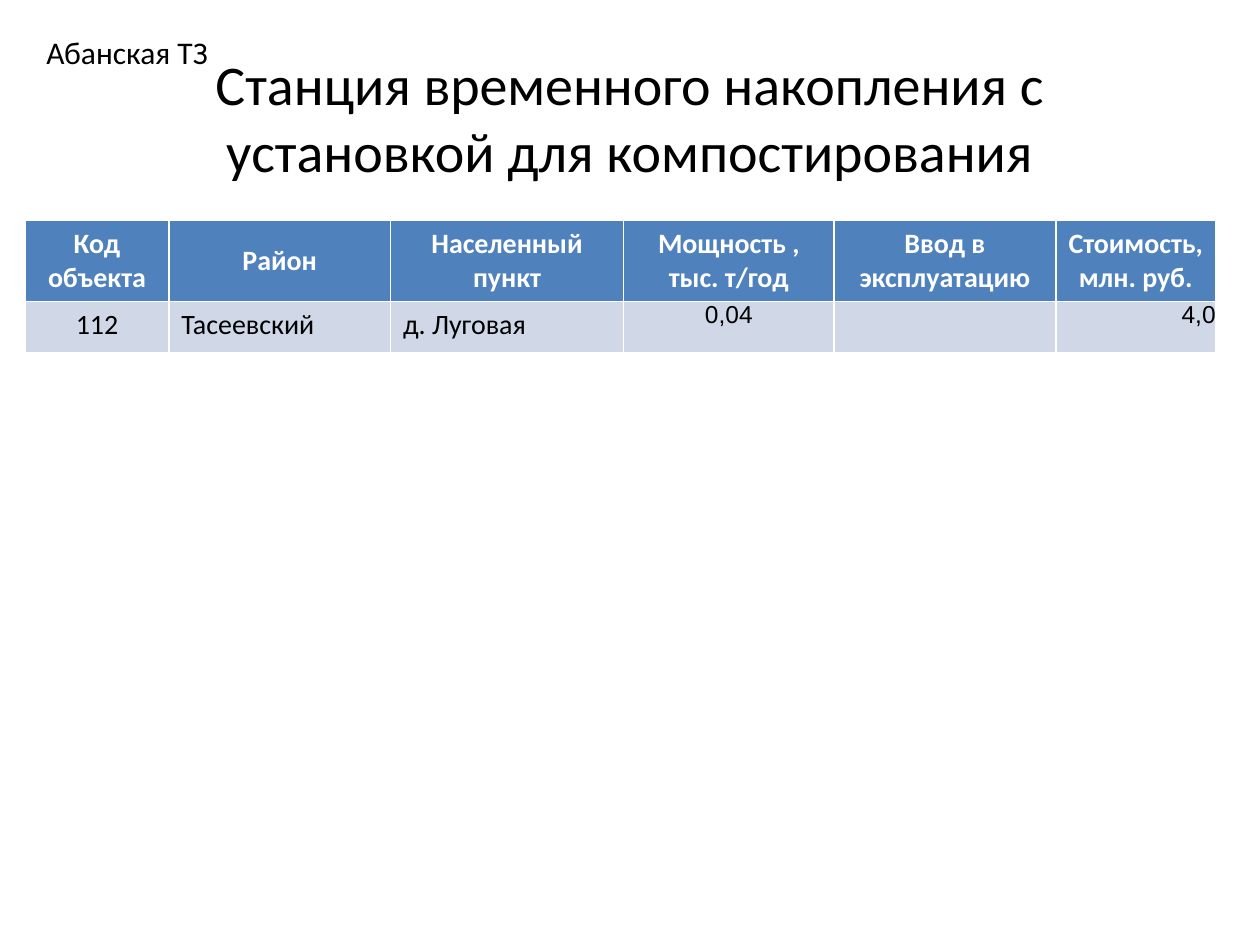
"""Builds a slide with a table of a waste storage station with composting."""
import lxml.etree
import pptx
import pptx.dml.color
import pptx.enum.text
import pptx.oxml.ns
import pptx.util

Inches = pptx.util.Inches
ALIGN = pptx.enum.text.PP_ALIGN
ANCHOR = pptx.enum.text.MSO_ANCHOR


def colour(value):
    """Return the colour for a hex string."""
    return pptx.dml.color.RGBColor.from_string(value)


def style_text(frame, size, ink="000000", align=ALIGN.LEFT, font="Calibri", bold=False):
    """Format every paragraph and run of a text frame."""
    for para in frame.paragraphs:
        para.alignment = align
        for span in para.runs:
            span.font.size = pptx.util.Pt(size)
            span.font.name = font
            span.font.bold = bold
            span.font.color.rgb = colour(ink)


deck = pptx.Presentation()
deck.slide_width, deck.slide_height = Inches(10), Inches(7.5)
page = deck.slides.add_slide(deck.slide_layouts[5])

title = page.shapes.title
title.left, title.top = Inches(0.5), Inches(0.3)
title.width, title.height = Inches(9), Inches(1.25)
title.text_frame.text = "Станция временного накопления с установкой для компостирования"
title.text_frame.vertical_anchor = ANCHOR.MIDDLE
style_text(title.text_frame, 32, align=ALIGN.CENTER)

columns = [
    ("Код объекта", "112", 1.14, ALIGN.CENTER),
    ("Район", "Тасеевский", 1.76, ALIGN.LEFT),
    ("Населенный пункт", "д. Луговая", 1.85, ALIGN.LEFT),
    ("Мощность , тыс. т/год", "0,04", 1.67, ALIGN.CENTER),
    ("Ввод в эксплуатацию", "", 1.76, ALIGN.LEFT),
    ("Стоимость, млн. руб.", "4,0", 1.27, ALIGN.RIGHT),
]
frame = page.shapes.add_table(2, len(columns), Inches(0.2), Inches(1.75), Inches(9.45), Inches(1.04))
table = frame.table
table.rows[0].height, table.rows[1].height = Inches(0.64), Inches(0.4)

for index, (heading, value, width, align) in enumerate(columns):
    table.columns[index].width = Inches(width)
    head, body = table.cell(0, index), table.cell(1, index)
    head.text_frame.text, body.text_frame.text = heading, value
    head.vertical_anchor = ANCHOR.MIDDLE
    style_text(head.text_frame, 16, "FFFFFF", ALIGN.CENTER, bold=True)
    if "," in value:
        body.margin_left = body.margin_top = body.margin_right = body.margin_bottom = 0
        style_text(body.text_frame, 14, align=align, font="Arial")
    else:
        style_text(body.text_frame, 16, align=align)
    for cell, fill in ((head, "4F81BD"), (body, "D0D8E8")):
        properties = cell._tc.get_or_add_tcPr()
        for side in ("a:lnL", "a:lnR", "a:lnT", "a:lnB"):
            line = lxml.etree.SubElement(properties, pptx.oxml.ns.qn(side), w="12700")
            solid = lxml.etree.SubElement(line, pptx.oxml.ns.qn("a:solidFill"))
            lxml.etree.SubElement(solid, pptx.oxml.ns.qn("a:srgbClr"), val="FFFFFF")
        cell.fill.solid()
        cell.fill.fore_color.rgb = colour(fill)

zone = page.shapes.add_textbox(Inches(0.27), Inches(0.21), Inches(1.5), Inches(0.4))
zone.text_frame.word_wrap = False
zone.text_frame.auto_size = pptx.enum.text.MSO_AUTO_SIZE.SHAPE_TO_FIT_TEXT
zone.text_frame.text = "Абанская ТЗ"
style_text(zone.text_frame, 18)

deck.save("out.pptx")
